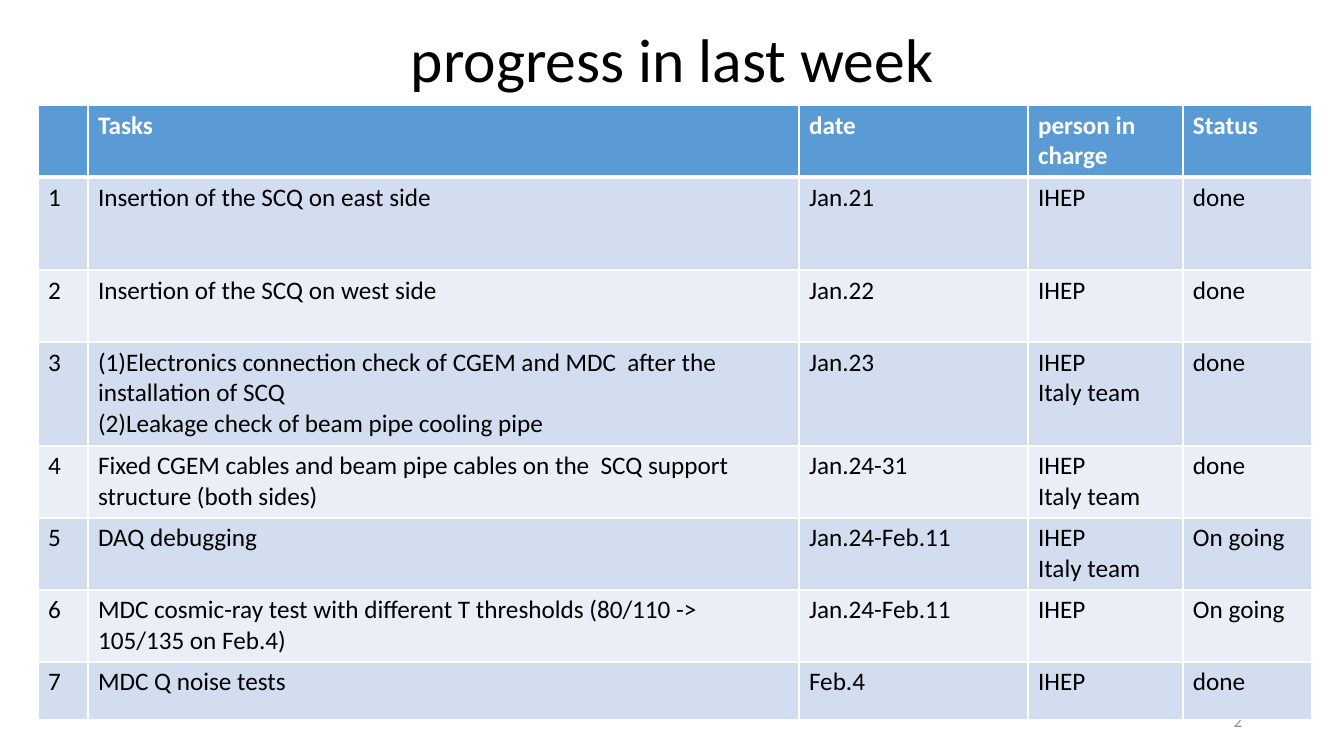
from dataclasses import dataclass

from lxml import etree
from pptx import Presentation
from pptx.dml.color import RGBColor
from pptx.enum.text import MSO_ANCHOR, MSO_AUTO_SIZE, PP_ALIGN
from pptx.oxml.ns import qn
from pptx.util import Pt

LEFT, CENTER, RIGHT = PP_ALIGN.LEFT, PP_ALIGN.CENTER, PP_ALIGN.RIGHT
TOP, MIDDLE = MSO_ANCHOR.TOP, MSO_ANCHOR.MIDDLE
NO_AUTOFIT = MSO_AUTO_SIZE.NONE
TITLE_ONLY = 5
EMU_PER_PX = 914400 / 100.8


@dataclass(frozen=True)
class Theme:
    font: str = "Calibri"
    ink: str = "000000"
    white: str = "FFFFFF"
    muted: str = "8C8C8C"
    header: str = "5B9BD5"
    bands: tuple = ("D2DEEF", "EAEFF7")
    title_size: int = 44
    table_size: int = 18
    number_size: int = 12
    thin: int = 1
    thick: int = 3


THEME = Theme()

PAGE_SIZE = (1344, 756)
TITLE_BOX = (93, 19, 1159, 87)
NUMBER_BOX = (950, 701, 302, 40)
TABLE_BOX = (38, 105, 1274, 615)
COLUMN_WIDTHS = (50, 711, 229, 155, 129)
ROW_HEIGHTS = (72, 93, 72, 104, 72, 72, 72, 58)

HEADINGS = ("", "Tasks", "date", "person in charge", "Status")
BOTH_TEAMS = "IHEP\nItaly team"
TASKS = (
    ("Insertion of the SCQ on east side", "Jan.21", "IHEP", "done"),
    ("Insertion of the SCQ on west side", "Jan.22", "IHEP", "done"),
    ("(1)Electronics connection check of CGEM and MDC  after the installation of SCQ\n"
     "(2)Leakage check of beam pipe cooling pipe", "Jan.23", BOTH_TEAMS, "done"),
    ("Fixed CGEM cables and beam pipe cables on the  SCQ support structure (both sides)",
     "Jan.24-31", BOTH_TEAMS, "done"),
    ("DAQ debugging", "Jan.24-Feb.11", BOTH_TEAMS, "On going"),
    ("MDC cosmic-ray test with different T thresholds (80/110 -> 105/135 on Feb.4)",
     "Jan.24-Feb.11", "IHEP", "On going"),
    ("MDC Q noise tests", "Feb.4", "IHEP", "done"),
)


def px(length):
    return round(length * EMU_PER_PX)


def write_text(frame, text, *, size, color=THEME.ink, bold=False, align=LEFT,
               anchor=TOP, spacing=None):
    frame.text = text
    frame.word_wrap = True
    frame.vertical_anchor = anchor
    for para in frame.paragraphs:
        para.alignment = align
        para.line_spacing = spacing
        for font in (para.font, *(span.font for span in para.runs)):
            font.name = THEME.font
            font.size = Pt(size)
            font.bold = bold
            font.color.rgb = RGBColor.from_string(color)


def add_title(page, box, text):
    title = page.shapes.title
    title.left, title.top, title.width, title.height = map(px, box)
    write_text(title.text_frame, text, size=THEME.title_size, align=CENTER,
               anchor=MIDDLE, spacing=0.9)
    title.text_frame.auto_size = NO_AUTOFIT


def add_page_number(page, box, number):
    label = page.shapes.add_textbox(*map(px, box))
    write_text(label.text_frame, str(number), size=THEME.number_size,
               color=THEME.muted, align=RIGHT, anchor=MIDDLE)


def set_borders(cell, **widths):
    properties = cell._tc.get_or_add_tcPr()
    for side in "LRTB":
        width = widths.get(side, THEME.thin)
        line = etree.SubElement(properties, qn(f"a:ln{side}"), w=str(Pt(width)))
        fill = etree.SubElement(line, qn("a:solidFill"))
        etree.SubElement(fill, qn("a:srgbClr"), val=THEME.white)


def format_cell(cell, text, row):
    is_header = row == 0
    write_text(cell.text_frame, text, size=THEME.table_size, bold=is_header,
               color=THEME.white if is_header else THEME.ink)
    set_borders(cell, B=THEME.thick if row == 0 else THEME.thin,
                T=THEME.thick if row == 1 else THEME.thin)
    cell.fill.solid()
    fill = THEME.header if is_header else THEME.bands[(row - 1) % 2]
    cell.fill.fore_color.rgb = RGBColor.from_string(fill)


def add_task_table(page, box):
    rows = [HEADINGS] + [(str(n), *task) for n, task in enumerate(TASKS, 1)]
    table = page.shapes.add_table(len(rows), len(HEADINGS), *map(px, box)).table
    for column, width in zip(table.columns, COLUMN_WIDTHS):
        column.width = px(width)
    for row, height in zip(table.rows, ROW_HEIGHTS):
        row.height = px(height)
    for row, texts in enumerate(rows):
        for column, text in enumerate(texts):
            format_cell(table.cell(row, column), text, row)


def main():
    deck = Presentation()
    deck.slide_width, deck.slide_height = map(px, PAGE_SIZE)
    page = deck.slides.add_slide(deck.slide_layouts[TITLE_ONLY])
    add_title(page, TITLE_BOX, "progress in last week")
    add_page_number(page, NUMBER_BOX, 2)
    add_task_table(page, TABLE_BOX)
    deck.save("out.pptx")


if __name__ == "__main__":
    main()
